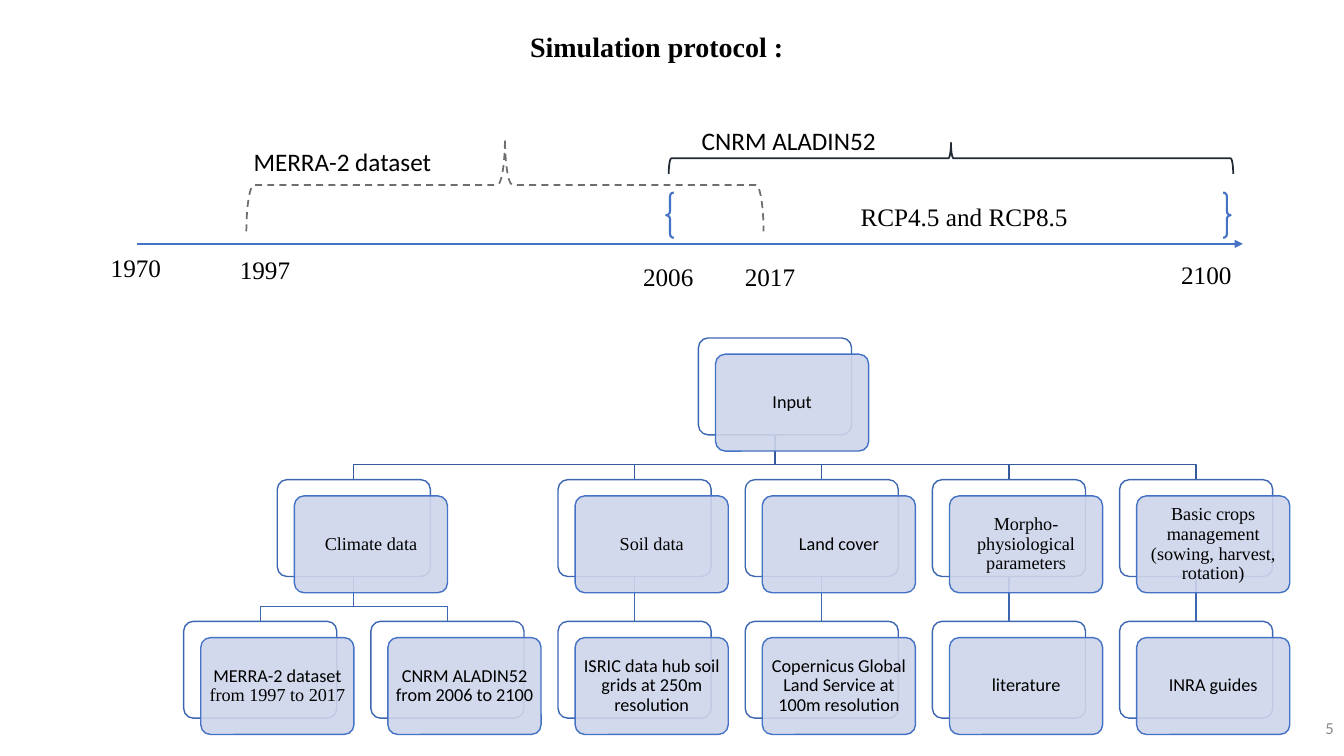
from dataclasses import dataclass

import lxml.etree
import pptx
import pptx.dml.color
import pptx.enum.dml
import pptx.enum.shapes
import pptx.enum.text
import pptx.oxml.ns
import pptx.util

Pt = pptx.util.Pt
SHAPE = pptx.enum.shapes.MSO_SHAPE
ALIGN = pptx.enum.text.PP_ALIGN
ANCHOR = pptx.enum.text.MSO_ANCHOR
qn = pptx.oxml.ns.qn


@dataclass(frozen=True)
class Theme:
    sans: str = "Calibri"
    serif: str = "Times New Roman"
    ink: str = "000000"
    muted: str = "8C8C8C"
    accent: str = "4472C4"
    navy: str = "222A35"
    outline: str = "3E67B2"
    branch: str = "365B9D"
    paper: str = "FFFFFF"
    card: str = "CFD5EA"
    title_size: int = 20
    label_size: int = 18
    card_size: int = 13
    page_size: int = 12


def rgb(value):
    return pptx.dml.color.RGBColor.from_string(value)


def set_opacity(colored, percent):
    """Set the opacity of the first RGB colour found inside an XML element."""
    color = next(colored.iter(qn("a:srgbClr")))
    lxml.etree.SubElement(color, qn("a:alpha")).set("val", str(percent * 1000))


class ProtocolSlide:
    card_width, card_height = 109.4, 69.2
    shift_x, shift_y = 12.2, 11.6
    first_column, column_pitch = 131.2, 133.7
    first_row, row_pitch = 241.4, 101.2

    def __init__(self, slide, theme):
        self.shapes = slide.shapes
        self.theme = theme

    def pen(self, line, color, width):
        line.color.rgb = rgb(color)
        line.width = Pt(width)

    def add_text(self, paragraph, text, font, size, color=None, bold=False):
        run = paragraph.add_run()
        run.text = text
        run.font.name = font
        run.font.size = Pt(size)
        run.font.bold = bold
        run.font.color.rgb = rgb(color or self.theme.ink)

    def label(self, text, left, top, width, font, size=None, align=ALIGN.LEFT,
              height=29, anchor=ANCHOR.TOP, **style):
        frame = self.shapes.add_textbox(Pt(left), Pt(top), Pt(width), Pt(height)).text_frame
        frame.word_wrap = True
        frame.vertical_anchor = anchor
        frame.paragraphs[0].alignment = align
        self.add_text(frame.paragraphs[0], text, font, size or self.theme.label_size, **style)

    def outline(self, kind, left, top, width, height, color, weight, fill=None):
        shape = self.shapes.add_shape(kind, Pt(left), Pt(top), Pt(width), Pt(height))
        shape.shadow.inherit = False
        if fill:
            shape.fill.solid()
            shape.fill.fore_color.rgb = rgb(fill)
        else:
            shape.fill.background()
        self.pen(shape.line, color, weight)
        return shape

    def top_brace(self, left, top, width, height, color):
        """Draw a brace that points up and fills the given area once turned."""
        inset = (width - height) / 2
        brace = self.outline(SHAPE.RIGHT_BRACE, left + inset, top - inset,
                             height, width, color, 1.25)
        brace.rotation = 270
        return brace

    def line(self, x1, y1, x2, y2, color, weight):
        connector = self.shapes.add_connector(
            pptx.enum.shapes.MSO_CONNECTOR.STRAIGHT, Pt(x1), Pt(y1), Pt(x2), Pt(y2))
        self.pen(connector.line, color, weight)
        lxml.etree.SubElement(connector._element.spPr, qn("a:effectLst"))
        return connector

    def arrow(self, x1, y1, x2, y2, color, weight):
        connector = self.line(x1, y1, x2, y2, color, weight)
        ln = connector._element.spPr.find(qn("a:ln"))
        lxml.etree.SubElement(ln, qn("a:tailEnd")).set("type", "triangle")

    def card(self, column, row, runs):
        """Draw a card over its offset backing and return the backing."""
        left = self.first_column + column * self.column_pitch
        top = self.first_row + row * self.row_pitch
        size = self.card_width, self.card_height
        backing = self.outline(SHAPE.ROUNDED_RECTANGLE, left, top, *size,
                               self.theme.outline, 1, self.theme.paper)
        front = self.outline(SHAPE.ROUNDED_RECTANGLE, left + self.shift_x,
                             top + self.shift_y, *size, self.theme.accent, 1, self.theme.card)
        set_opacity(front._element.spPr.find(qn("a:solidFill")), 90)
        for box in (backing, front):
            box.adjustments[0] = 0.1
        frame = front.text_frame
        frame.word_wrap = True
        frame.vertical_anchor = ANCHOR.MIDDLE
        frame.margin_left = frame.margin_right = Pt(3.6)
        frame.margin_top = frame.margin_bottom = Pt(3.6)
        paragraph = frame.paragraphs[0]
        paragraph.alignment = ALIGN.CENTER
        paragraph.line_spacing = 0.9
        for text, font in runs:
            self.add_text(paragraph, text, font, self.theme.card_size)
        return backing

    def link(self, parent, child, color):
        """Join two cards behind all others, with a bend if their columns differ."""
        x1, y1 = parent.left + parent.width // 2, parent.top + parent.height
        x2, y2 = child.left + child.width // 2, child.top
        if x1 == x2:
            joint = self.line(0, 0, 0, 0, color, 1)
            joint.begin_connect(parent, 2)
            joint.end_connect(child, 0)
        else:
            bend = y1 + (y2 - y1) * 2 // 3
            route = self.shapes.build_freeform(x1, y1)
            route.add_line_segments([(x1, bend), (x2, bend), (x2, y2)], close=False)
            joint = route.convert_to_shape()
            joint.shadow.inherit = False
            joint.fill.background()
            self.pen(joint.line, color, 1)
        self.shapes._spTree.insert(2, joint._element)


def draw_timeline(page, theme):
    page.arrow(97.9, 174.2, 887.8, 174.2, theme.accent, 1.25)
    years = [("1970", 72, 176.4), ("1997", 164.2, 177.8), ("2006", 452.2, 182.9),
             ("2017", 524.9, 182.9), ("2100", 836.6, 181.4)]
    for year, left, top in years:
        page.label(year, left, top, 51, theme.serif)
    observed = page.top_brace(176, 99, 369.4, 66.2, theme.ink)
    observed.line.dash_style = pptx.enum.dml.MSO_LINE.DASH
    set_opacity(observed._element.spPr.find(qn("a:ln")), 56)
    page.top_brace(477.7, 101.9, 403.2, 22.3, theme.navy)
    page.outline(SHAPE.DOUBLE_BRACE, 475.9, 137.5, 403.2, 32.4, theme.accent, 1.5)
    page.label("MERRA-2 dataset", 174, 100.8, 209, theme.sans)
    page.label("CNRM ALADIN52", 471.6, 85.7, 183.6, theme.sans, align=ALIGN.CENTER)
    page.label("RCP4.5 and RCP8.5", 550.8, 140.4, 275.8, theme.serif, align=ALIGN.CENTER)


def draw_input_tree(page, theme):
    sans, serif = theme.sans, theme.serif
    branches = [
        (("Climate data", serif), [
            [("MERRA-2 dataset ", sans), ("from 1997 to 2017", serif)],
            [("CNRM ALADIN52 from 2006 to 2100", sans)]]),
        (("Soil data", serif), [[("ISRIC data hub soil grids at 250m resolution", sans)]]),
        (("Land cover", sans), [[("Copernicus Global Land Service at 100m resolution", sans)]]),
        (("Morpho-physiological parameters", serif), [[("literature", sans)]]),
        (("Basic crops management (sowing, harvest, rotation)", serif),
         [[("INRA guides", sans)]]),
    ]
    last_column = sum(len(sources) for _, sources in branches) - 1
    first_center = (len(branches[0][1]) - 1) / 2
    root = page.card((first_center + last_column) / 2, 0, [("Input", sans)])
    column = 0
    for heading, sources in branches:
        category = page.card(column + (len(sources) - 1) / 2, 1, [heading])
        page.link(root, category, theme.branch)
        for source in sources:
            page.link(category, page.card(column, 2, source), theme.outline)
            column += 1


def main():
    deck = pptx.Presentation()
    deck.slide_width, deck.slide_height = Pt(960), Pt(540)
    theme = Theme()
    page = ProtocolSlide(deck.slides.add_slide(deck.slide_layouts[6]), theme)
    page.label("5", 743.8, 505.4, 216, theme.sans, theme.page_size, ALIGN.RIGHT,
               anchor=ANCHOR.MIDDLE, color=theme.muted)
    page.label("Simulation protocol :", 371.5, 17.3, 400, theme.serif,
               theme.title_size, height=31.7, bold=True)
    draw_timeline(page, theme)
    draw_input_tree(page, theme)
    deck.save("out.pptx")


if __name__ == "__main__":
    main()
